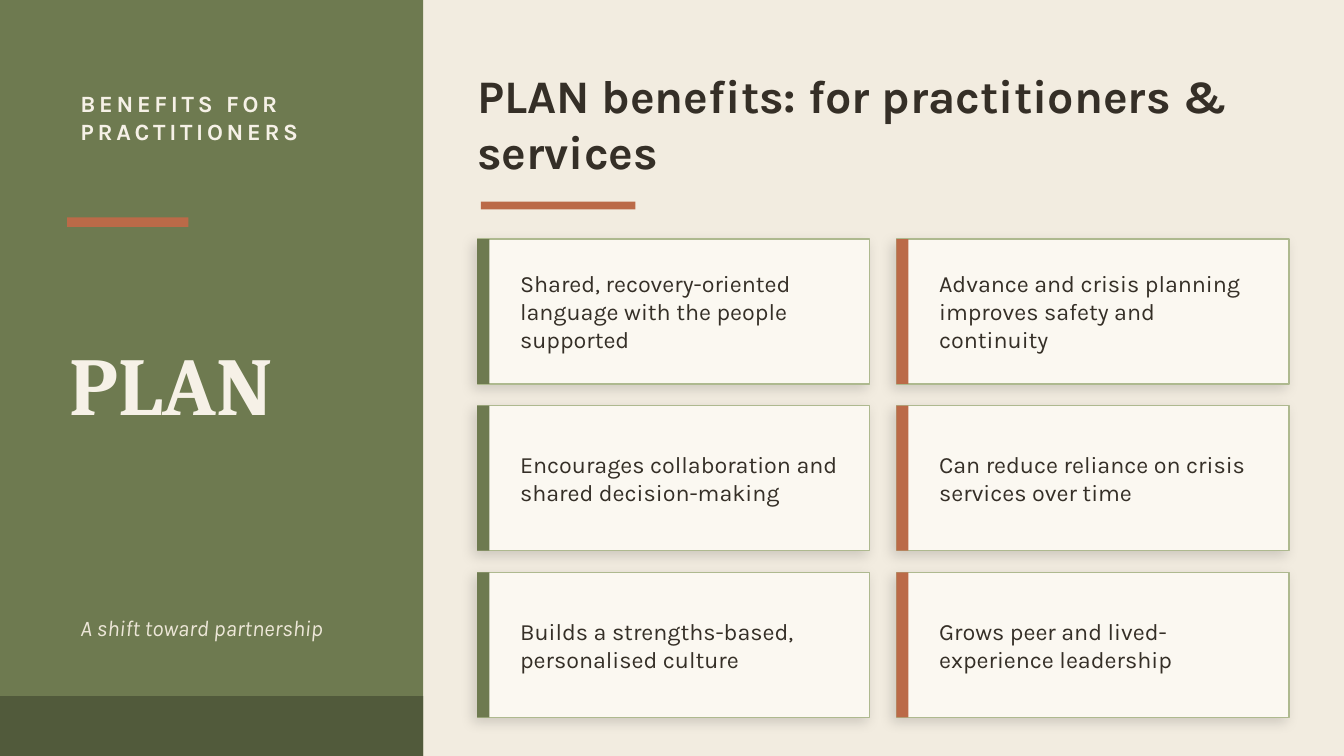
import pptx
import pptx.dml.color
import pptx.enum.shapes
import pptx.enum.text
import pptx.oxml
import pptx.oxml.ns
import pptx.util

Cm = pptx.util.Cm
Pt = pptx.util.Pt
Anchor = pptx.enum.text.MSO_ANCHOR

COLORS = {
    "background": "F2ECE0",
    "olive": "6E7A50",
    "dark_olive": "515A3B",
    "terracotta": "BB6A48",
    "card": "FBF8F1",
    "card_line": "AEB98F",
    "cream": "F6F1E7",
    "tagline": "EDE7D8",
    "ink": "352F27",
}

BENEFITS = [
    "Shared, recovery-oriented language with the people supported",
    "Advance and crisis planning improves safety and continuity",
    "Encourages collaboration and shared decision-making",
    "Can reduce reliance on crisis services over time",
    "Builds a strengths-based, personalised culture",
    "Grows peer and lived-experience leadership",
]

CARD_LEFT, CARD_TOP = 9.02, 4.52
CARD_WIDTH, CARD_HEIGHT = 7.42, 2.74
COLUMN_STEP, ROW_STEP = 7.92, 3.15

SHADOW_XML = (
    f'<a:effectLst {pptx.oxml.ns.nsdecls("a")}>'
    f'<a:outerShdw blurRad="{Pt(7)}" dist="{Pt(3)}" dir="{135 * 60000}" '
    'algn="bl" rotWithShape="0">'
    '<a:srgbClr val="000000"><a:alpha val="14000"/></a:srgbClr>'
    '</a:outerShdw></a:effectLst>'
)


def rgb(name):
    return pptx.dml.color.RGBColor.from_string(COLORS[name])


def add_block(slide, left, top, width, height, fill, line=None):
    """Add a flat rectangle, measured in centimetres."""
    shape = slide.shapes.add_shape(
        pptx.enum.shapes.MSO_SHAPE.RECTANGLE,
        Cm(left), Cm(top), Cm(width), Cm(height))
    shape.shadow.inherit = False
    shape.fill.solid()
    shape.fill.fore_color.rgb = rgb(fill)
    if line:
        shape.line.color.rgb = rgb(line)
        shape.line.width = Pt(0.75)
    else:
        shape.line.fill.background()
    return shape


def write_text(shape, text, *, size, color, font="Karla", bold=False,
               italic=False, line_points=None, tracking=None,
               anchor=Anchor.TOP):
    frame = shape.text_frame
    frame.word_wrap = True
    frame.auto_size = pptx.enum.text.MSO_AUTO_SIZE.NONE
    frame.vertical_anchor = anchor
    paragraph = frame.paragraphs[0]
    paragraph.alignment = pptx.enum.text.PP_ALIGN.LEFT
    if line_points:
        paragraph.line_spacing = Pt(line_points)
    run = paragraph.add_run()
    run.text = text
    run.font.name = font
    run.font.size = Pt(size)
    run.font.bold = bold
    run.font.italic = italic
    run.font.color.rgb = rgb(color)
    if tracking:
        run._r.get_or_add_rPr().set("spc", str(tracking * 100))


def add_text(slide, left, top, width, height, text, **style):
    box = slide.shapes.add_textbox(Cm(left), Cm(top), Cm(width), Cm(height))
    write_text(box, text, **style)


def add_title(slide, text):
    title = slide.shapes.title
    title.left, title.top = Cm(CARD_LEFT), Cm(1.27)
    title.width, title.height = Cm(15.24), Cm(2.54)
    frame = title.text_frame
    frame.margin_left = frame.margin_right = 0
    frame.margin_top = frame.margin_bottom = 0
    write_text(title, text, size=25, color="ink", bold=True)
    add_block(slide, 9.09, 3.81, 2.92, 0.15, "terracotta")


def add_side_panel(slide):
    add_block(slide, 0, 0, 8, 14.29, "olive")
    add_block(slide, 0, 13.16, 8, 1.13, "dark_olive")
    add_block(slide, 1.27, 4.11, 2.29, 0.18, "terracotta")
    add_text(slide, 1.27, 1.57, 6.1, 2.54, "BENEFITS FOR PRACTITIONERS",
             size=12.5, color="cream", bold=True, line_points=15, tracking=2)
    add_text(slide, 1.07, 5.08, 6.48, 4.32, "PLAN", size=44, color="cream",
             font="Cambria", bold=True, anchor=Anchor.MIDDLE)
    add_text(slide, 1.27, 11.43, 5.97, 2.29, "A shift toward partnership",
             size=12, color="tagline", italic=True, line_points=16)


def add_card(slide, left, top, text, accent):
    card = add_block(slide, left, top, CARD_WIDTH, CARD_HEIGHT, "card",
                     line="card_line")
    properties = card._element.spPr
    properties.remove(properties.find(pptx.oxml.ns.qn("a:effectLst")))
    properties.append(pptx.oxml.parse_xml(SHADOW_XML))
    add_block(slide, left, top, 0.23, CARD_HEIGHT, accent)
    add_text(slide, left + 0.56, top + 0.15, 6.5, CARD_HEIGHT - 0.3, text,
             size=12.5, color="ink", line_points=15, anchor=Anchor.MIDDLE)


def main():
    presentation = pptx.Presentation()
    presentation.slide_width = Cm(25.4)
    presentation.slide_height = Cm(14.29)
    slide = presentation.slides.add_slide(presentation.slide_layouts[5])
    slide.background.fill.solid()
    slide.background.fill.fore_color.rgb = rgb("background")

    add_side_panel(slide)
    add_title(slide, "PLAN benefits: for practitioners & services")
    for index, benefit in enumerate(BENEFITS):
        row, column = divmod(index, 2)
        add_card(slide, CARD_LEFT + column * COLUMN_STEP,
                 CARD_TOP + row * ROW_STEP, benefit,
                 ("olive", "terracotta")[column])

    presentation.save("out.pptx")


if __name__ == "__main__":
    main()
